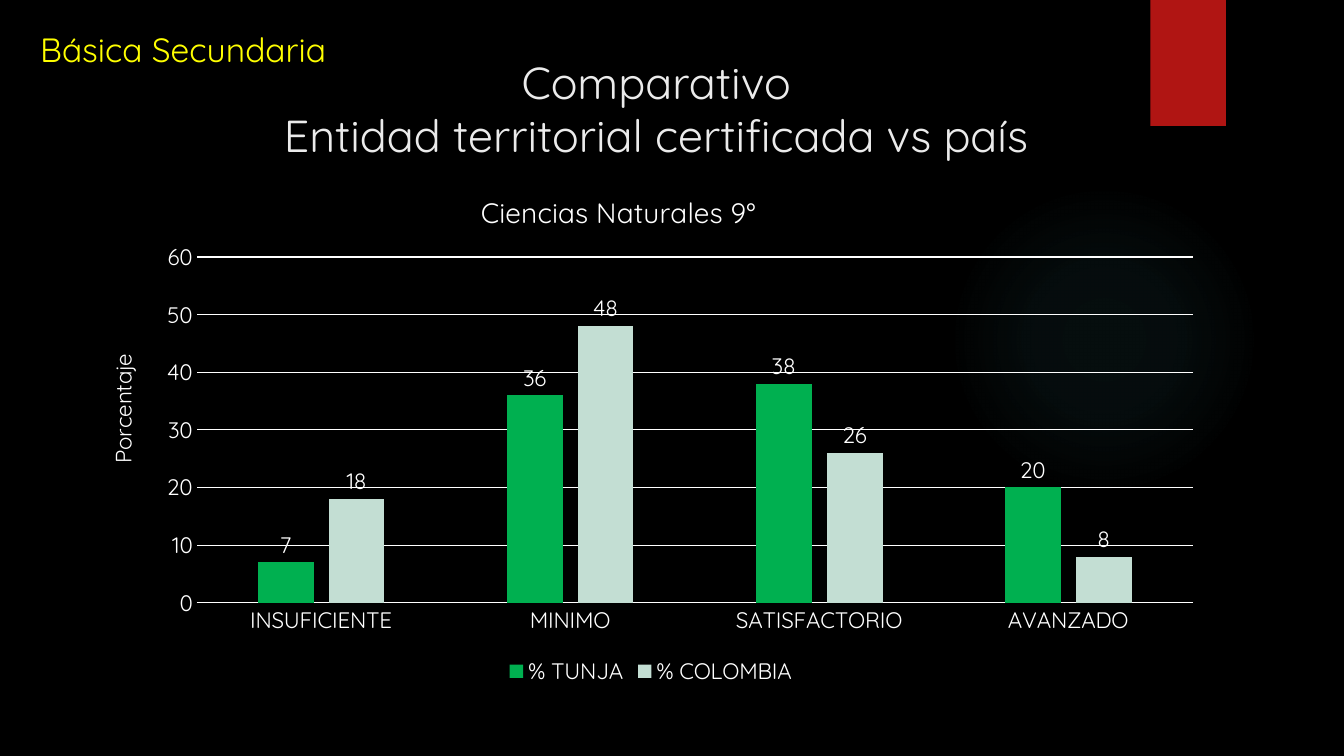
"""Build the slide comparing Tunja and Colombia in ninth-grade natural sciences."""

from dataclasses import dataclass

from lxml import etree
from pptx import Presentation
from pptx.chart.chart import Chart
from pptx.chart.data import CategoryChartData
from pptx.dml.color import RGBColor
from pptx.enum.chart import XL_CHART_TYPE, XL_LABEL_POSITION, XL_LEGEND_POSITION, XL_TICK_MARK
from pptx.enum.shapes import MSO_SHAPE
from pptx.enum.text import PP_ALIGN
from pptx.oxml import parse_xml
from pptx.oxml.ns import nsdecls, qn
from pptx.slide import Slide
from pptx.text.text import Font
from pptx.util import Inches, Pt

CLUSTERED = XL_CHART_TYPE.COLUMN_CLUSTERED
OUTSIDE_END = XL_LABEL_POSITION.OUTSIDE_END
BOTTOM = XL_LEGEND_POSITION.BOTTOM
NO_TICK = XL_TICK_MARK.NONE
ELLIPSE, RECTANGLE = MSO_SHAPE.OVAL, MSO_SHAPE.RECTANGLE
LEFT, CENTER = PP_ALIGN.LEFT, PP_ALIGN.CENTER

BLACK = RGBColor(0x00, 0x00, 0x00)
WHITE = RGBColor(0xFF, 0xFF, 0xFF)
PALE = RGBColor(0xEB, 0xEB, 0xEB)
YELLOW = RGBColor(0xFF, 0xFF, 0x00)
RED = RGBColor(0xB0, 0x15, 0x13)
TEAL = RGBColor(0x50, 0xB9, 0xC1)
GREEN = RGBColor(0x00, 0xB0, 0x50)
MINT = RGBColor(0xC3, 0xDE, 0xD3)
TYPEFACE = "Quicksand"


@dataclass(frozen=True)
class Box:
    left: float
    top: float
    width: float
    height: float

    def inches(self) -> tuple[Inches, ...]:
        return tuple(Inches(n) for n in (self.left, self.top, self.width, self.height))


@dataclass(frozen=True)
class Territory:
    name: str
    percentages: tuple[int, ...]
    color: RGBColor


LEVELS = ("INSUFICIENTE", "MINIMO", "SATISFACTORIO", "AVANZADO")
TERRITORIES = (
    Territory("% TUNJA", (7, 36, 38, 20), GREEN),
    Territory("% COLOMBIA", (18, 48, 26, 8), MINT),
)
CHART_BOX = Box(0.85, 1.64, 11.21, 5.2)
PLOT_BOX = Box(1.95, 2.55, 9.88, 3.43)


def style_font(font: Font, size: float, color: RGBColor = WHITE) -> None:
    font.name = TYPEFACE
    font.size = Pt(size)
    font.bold = False
    font.color.rgb = color


def add_text(slide: Slide, text: str, box: Box, *, size: float, color: RGBColor,
             align: PP_ALIGN = LEFT) -> None:
    frame = slide.shapes.add_textbox(*box.inches()).text_frame
    frame.word_wrap = True
    paragraph = frame.paragraphs[0]
    paragraph.alignment = align
    for number, line in enumerate(text.splitlines()):
        if number:
            paragraph.add_line_break()
        run = paragraph.add_run()
        run.text = line
        style_font(run.font, size, color)


def add_glow(slide: Slide) -> None:
    glow = slide.shapes.add_shape(ELLIPSE, *Box(9.41, 1.83, 3.08, 3.08).inches())
    glow.shadow.inherit = False
    glow.line.fill.background()
    glow.fill.background()
    stops = "".join(
        f'<a:gs pos="{position * 1000}"><a:srgbClr val="{TEAL}">'
        f'<a:alpha val="{opacity * 1000}"/></a:srgbClr></a:gs>'
        for position, opacity in ((0, 7), (36, 6), (69, 0))
    )
    gradient = parse_xml(
        f'<a:gradFill {nsdecls("a")}><a:gsLst>{stops}</a:gsLst><a:path path="circle">'
        '<a:fillToRect l="50000" t="50000" r="50000" b="50000"/></a:path></a:gradFill>'
    )
    properties = glow._element.spPr
    properties.replace(properties.find(qn("a:noFill")), gradient)


def add_ribbon(slide: Slide) -> None:
    ribbon = slide.shapes.add_shape(RECTANGLE, *Box(11.41, 0, 0.75, 1.25).inches())
    ribbon.shadow.inherit = False
    ribbon.fill.solid()
    ribbon.fill.fore_color.rgb = RED
    ribbon.line.fill.background()
    ribbon._element.spPr.find(qn("a:effectLst")).append(parse_xml(
        f'<a:outerShdw {nsdecls("a")} blurRad="{Pt(3)}" dist="{Pt(2)}" dir="5400000">'
        f'<a:srgbClr val="{BLACK}"><a:alpha val="45000"/></a:srgbClr></a:outerShdw>'
    ))


def place(element: etree._Element, index: int, left: float, top: float,
          size: tuple[float, float] | None = None) -> None:
    for automatic in element.findall(qn("c:layout")):
        element.remove(automatic)
    settings = {"xMode": "edge", "yMode": "edge"}
    if size:
        settings = {"layoutTarget": "inner"} | settings
    settings["x"] = (left - CHART_BOX.left) / CHART_BOX.width
    settings["y"] = (top - CHART_BOX.top) / CHART_BOX.height
    if size:
        settings["w"] = size[0] / CHART_BOX.width
        settings["h"] = size[1] / CHART_BOX.height
    entries = "".join(f'<c:{key} val="{value}"/>' for key, value in settings.items())
    element.insert(index, parse_xml(
        f'<c:layout {nsdecls("c")}><c:manualLayout>{entries}</c:manualLayout></c:layout>'
    ))


def format_axes(chart: Chart) -> None:
    levels, percentage = chart.category_axis, chart.value_axis
    for axis in (levels, percentage):
        axis.major_tick_mark = axis.minor_tick_mark = NO_TICK
        style_font(axis.tick_labels.font, 16)
    percentage.minimum_scale, percentage.maximum_scale = 0, 60
    percentage.major_unit = 10
    percentage.format.line.fill.background()
    for line in (levels.format.line, percentage.major_gridlines.format.line):
        line.color.rgb = WHITE
        line.width = Pt(0.75)


def add_comparison(slide: Slide) -> None:
    data = CategoryChartData()
    data.categories = LEVELS
    for territory in TERRITORIES:
        data.add_series(territory.name, territory.percentages)
    chart = slide.shapes.add_chart(CLUSTERED, *CHART_BOX.inches(), data).chart
    style_font(chart.font, 10)
    format_axes(chart)
    titles = (
        (chart.chart_title, "Ciencias Naturales 9°", 20, 4.72, 1.85),
        (chart.value_axis.axis_title, "Porcentaje", 16, 1.02, 3.47),
    )
    for title, wording, size, left, top in titles:
        title.text_frame.text = wording
        style_font(title.text_frame.paragraphs[0].runs[0].font, size)
        place(title._element, 1, left, top)
    place(chart._chartSpace.chart.plotArea, 0, PLOT_BOX.left, PLOT_BOX.top,
          (PLOT_BOX.width, PLOT_BOX.height))
    chart.has_legend = True
    chart.legend.position = BOTTOM
    chart.legend.include_in_layout = False
    style_font(chart.legend.font, 16)
    columns = chart.plots[0]
    columns.vary_by_categories = False
    columns.gap_width, columns.overlap = 219, -27
    for series, territory in zip(columns.series, TERRITORIES):
        series.format.fill.solid()
        series.format.fill.fore_color.rgb = territory.color
        labels = series.data_labels
        labels.show_value = True
        labels.position = OUTSIDE_END
        style_font(labels.font, 16)


def main() -> None:
    presentation = Presentation()
    presentation.slide_width, presentation.slide_height = Inches(13.33), Inches(7.5)
    slide = presentation.slides.add_slide(presentation.slide_layouts[6])
    slide.background.fill.solid()
    slide.background.fill.fore_color.rgb = BLACK
    add_glow(slide)
    add_ribbon(slide)
    add_comparison(slide)
    add_text(slide, """Comparativo
Entidad territorial certificada vs país""",
             Box(1.94, 0.49, 9.14, 1.53), size=32, color=PALE, align=CENTER)
    add_text(slide, "Básica Secundaria", Box(0.3, 0.24, 3.23, 0.5), size=24, color=YELLOW)
    presentation.save("out.pptx")


if __name__ == "__main__":
    main()
